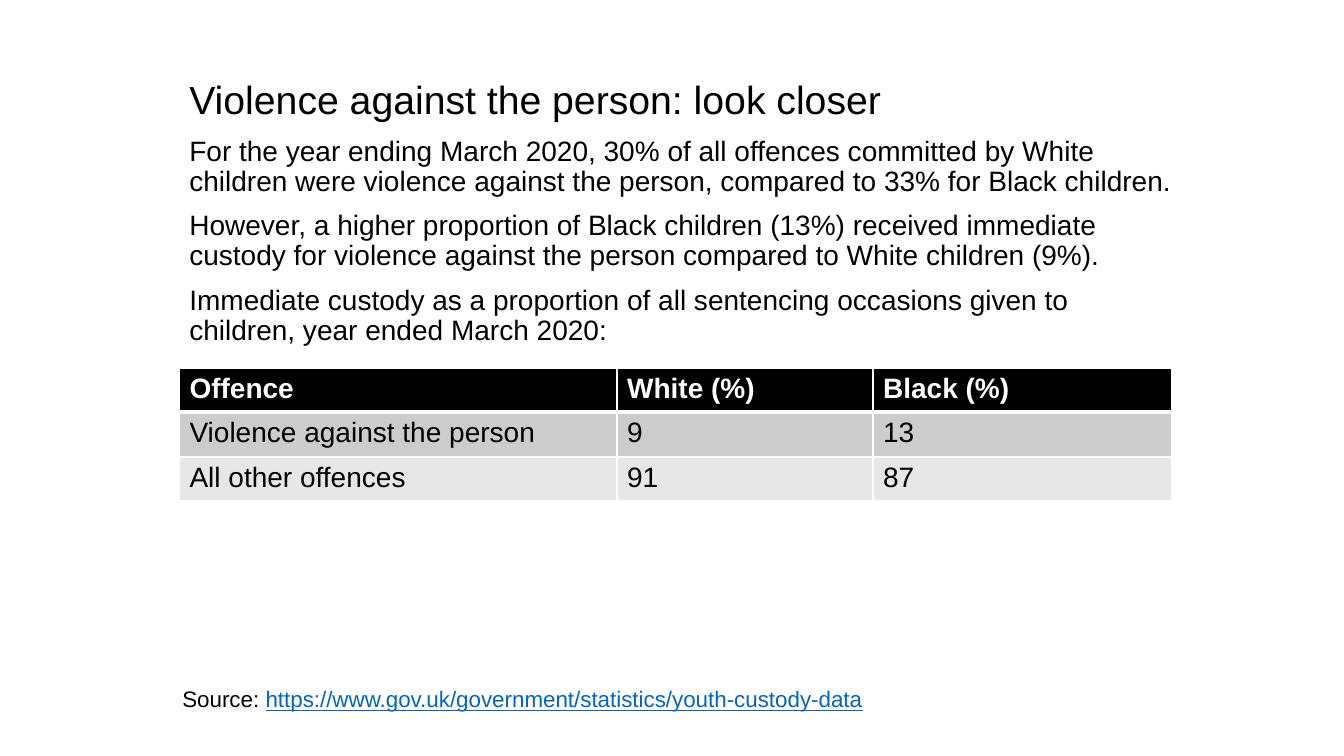
from lxml.etree import SubElement
from pptx import Presentation
from pptx.dml.color import RGBColor
from pptx.oxml.ns import qn
from pptx.util import Inches, Pt

WIDTH, HEIGHT = Inches(13.33), Inches(7.5)
COLORS = {
    "text": "000000",
    "header": "000000",
    "white": "FFFFFF",
    "row_dark": "CCCCCC",
    "row_light": "E7E7E7",
    "link": "0563C1",
}
TITLE = "Violence against the person: look closer"
FINDINGS = [
    "For the year ending March 2020, 30% of all offences committed by White children "
    "were violence against the person, compared to 33% for Black children.",
    "However, a higher proportion of Black children (13%) received immediate custody "
    "for violence against the person compared to White children (9%).",
    "Immediate custody as a proportion of all sentencing occasions given to children, "
    "year ended March 2020:",
]
OFFENCES = [
    ["Offence", "White (%)", "Black (%)"],
    ["Violence against the person", "9", "13"],
    ["All other offences", "91", "87"],
]
ROW_FILLS = ["header", "row_dark", "row_light"]
COLUMN_SHARES = [32.56, 19.05, 22.2]
ROW_SHARES = [5.47, 6, 5.47]
BODY_SPACING = {"line_spacing": 0.9, "space_before": Pt(10)}


def x(percent):
    return int(WIDTH * percent / 100)


def y(percent):
    return int(HEIGHT * percent / 100)


def rgb(name):
    return RGBColor.from_string(COLORS[name])


def apply_format(target, values):
    for name, value in values.items():
        setattr(target, name, value)


def add_run(p, text, size, color="text", **values):
    r = p.add_run()
    r.text = text
    apply_format(r.font, {"name": "Arial", "size": Pt(size), **values})
    r.font.color.rgb = rgb(color)


def add_text(s, left, top, width, height, paragraphs, **spacing):
    tf = s.shapes.add_textbox(x(left), y(top), x(width), y(height)).text_frame
    tf.word_wrap = True
    for i, runs in enumerate(paragraphs):
        p = tf.add_paragraph() if i else tf.paragraphs[0]
        apply_format(p, spacing)
        for text, size, values in runs:
            add_run(p, text, size, **values)


def add_borders(cell, widths):
    tc_pr = cell._tc.get_or_add_tcPr()
    for side, width in widths.items():
        line = SubElement(tc_pr, qn(f"a:ln{side}"), w=str(Pt(width)))
        fill = SubElement(line, qn("a:solidFill"))
        SubElement(fill, qn("a:srgbClr"), val=COLORS["white"])


def add_offence_table(s, left, top):
    frame = s.shapes.add_table(
        len(ROW_SHARES), len(COLUMN_SHARES), x(left), y(top),
        x(sum(COLUMN_SHARES)), y(sum(ROW_SHARES)))
    table = frame.table
    for column, share in zip(table.columns, COLUMN_SHARES):
        column.width = x(share)
    for i, (row, share) in enumerate(zip(table.rows, ROW_SHARES)):
        row.height = y(share)
        header = i == 0
        borders = {"L": 1, "R": 1, "T": 3 if i == 1 else 1, "B": 3 if header else 1}
        for cell, text in zip(row.cells, OFFENCES[i]):
            add_borders(cell, borders)
            cell.fill.solid()
            cell.fill.fore_color.rgb = rgb(ROW_FILLS[i])
            add_run(cell.text_frame.paragraphs[0], text, 20,
                    "white" if header else "text", bold=header)


def main():
    prs = Presentation()
    apply_format(prs, {"slide_width": WIDTH, "slide_height": HEIGHT})
    s = prs.slides.add_slide(prs.slide_layouts[6])
    body = [[(TITLE, 28, {})]] + [[(text, 20, {})] for text in FINDINGS]
    add_text(s, 13.35, 10, 75, 77.33, body, **BODY_SPACING)
    add_offence_table(s, 13.35, 48.67)
    source = [
        ("Source: ", 16, {}),
        ("https://www.gov.uk/government/statistics/youth-custody-data", 16,
         {"color": "link", "underline": True}),
    ]
    add_text(s, 12.83, 90, 72.69, 4.93, [source])
    prs.save("out.pptx")


if __name__ == "__main__":
    main()
